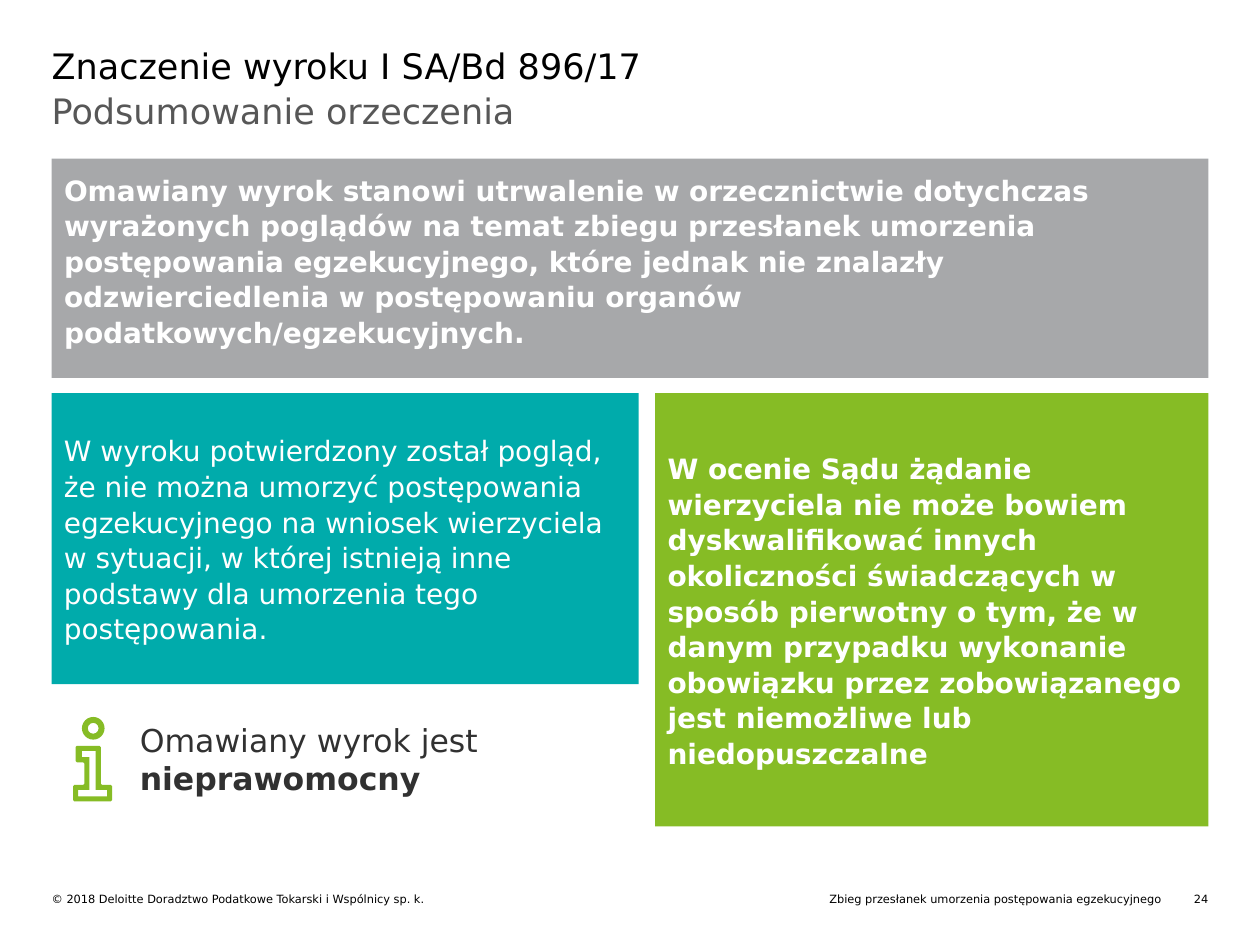
"""Build a slide that sums up a court ruling in three panels and a note."""
from math import hypot

from pptx import Presentation
from pptx.dml.color import RGBColor
from pptx.enum.shapes import MSO_SHAPE
from pptx.enum.text import MSO_ANCHOR, PP_ALIGN
from pptx.util import Inches, Pt

RECT, DONUT = MSO_SHAPE.RECTANGLE, MSO_SHAPE.DONUT
TOP, MIDDLE = MSO_ANCHOR.TOP, MSO_ANCHOR.MIDDLE
LEFT, RIGHT = PP_ALIGN.LEFT, PP_ALIGN.RIGHT

THEME = {
    "font": "DejaVu Sans",
    "colors": {"black": "000000", "subtitle": "575757", "note": "313131",
               "white": "FFFFFF", "gray": "A7A8AA", "teal": "00ABAB",
               "green": "86BC25"},
    "sizes": {"title": 20, "panel": 16, "note": 18, "footer": 6.5},
}

MARGIN, WIDTH = 0.41, 9.18
SPLIT, RIGHT_WIDTH = 5.2, 4.39
ROW = 3.12

PANELS = [
    ((MARGIN, 1.26, WIDTH, 1.74), "gray", TOP, True,
     "Omawiany wyrok stanowi utrwalenie w orzecznictwie dotychczas wyrażonych "
     "poglądów na temat zbiegu przesłanek umorzenia postępowania egzekucyjnego, "
     "które jednak nie znalazły odzwierciedlenia w postępowaniu organów "
     "podatkowych/egzekucyjnych."),
    ((MARGIN, ROW, 4.66, 2.31), "teal", MIDDLE, False,
     "W wyroku potwierdzony został pogląd, że nie można umorzyć postępowania "
     "egzekucyjnego na wniosek wierzyciela w sytuacji, w której istnieją inne "
     "podstawy dla umorzenia tego postępowania."),
    ((SPLIT, ROW, RIGHT_WIDTH, 3.44), "green", MIDDLE, True,
     "W ocenie Sądu żądanie wierzyciela nie może bowiem dyskwalifikować innych "
     "okoliczności świadczących w sposób pierwotny o tym, że w danym przypadku "
     "wykonanie obowiązku przez zobowiązanego jest niemożliwe lub "
     "niedopuszczalne"),
]

LABELS = [
    ((MARGIN, 0.35, WIDTH, 0.44), "title", "black", LEFT,
     [("Znaczenie wyroku I SA/Bd 896/17", False)]),
    ((MARGIN, 0.71, WIDTH, 0.83), "title", "subtitle", LEFT,
     [("Podsumowanie orzeczenia", False)]),
    ((1.11, 5.72, 3.87, 0.61), "note", "note", LEFT,
     [("Omawiany wyrok jest ", False), ("nieprawomocny", True)]),
    ((MARGIN, 7.08, 4.39, 0.11), "footer", "black", LEFT,
     [("© 2018 Deloitte Doradztwo Podatkowe Tokarski i Wspólnicy sp. k.", False)]),
    ((SPLIT, 7.08, 4.02, 0.11), "footer", "black", RIGHT,
     [("Zbieg przesłanek umorzenia postępowania egzekucyjnego", False)]),
    ((9.34, 7.08, 0.25, 0.11), "footer", "black", RIGHT, [("24", False)]),
]

RING = (0.65, 5.69, 0.18, 0.18)
RING_BAND = 0.26
STEM_OUTER = [(0.58, 6.36), (0.58, 6.23), (0.67, 6.23), (0.67, 6.05),
              (0.6, 6.05), (0.6, 5.92), (0.8, 5.92), (0.8, 6.23),
              (0.89, 6.23), (0.89, 6.36)]
STEM_INNER = [(0.62, 6.32), (0.62, 6.27), (0.71, 6.27), (0.71, 6.01),
              (0.65, 6.01), (0.65, 5.96), (0.76, 5.96), (0.76, 6.27),
              (0.85, 6.27), (0.85, 6.32)]


def color(name):
    return RGBColor.from_string(THEME["colors"][name])


def paint(sp, fill):
    sp.shadow.inherit = False
    sp.fill.solid()
    sp.fill.fore_color.rgb = color(fill)
    sp.line.fill.background()


def write(sp, runs, size, ink, inset=0, anchor=TOP, align=LEFT, spacing=None):
    tf = sp.text_frame
    frame = {"word_wrap": True, "vertical_anchor": anchor}
    frame.update({f"margin_{side}": Inches(inset)
                  for side in ("left", "top", "right", "bottom")})
    for key, value in frame.items():
        setattr(tf, key, value)
    p = tf.paragraphs[0]
    p.alignment, p.line_spacing = align, spacing
    for text, bold in runs:
        r = p.add_run()
        r.text = text
        font = {"name": THEME["font"], "size": Pt(THEME["sizes"][size]), "bold": bold}
        for key, value in font.items():
            setattr(r.font, key, value)
        r.font.color.rgb = color(ink)


def bevel(points, cut=0.01):
    result = []
    for i, (x, y) in enumerate(points):
        before, after = points[i - 1], points[(i + 1) % len(points)]
        for nx, ny in (before, after):
            ratio = cut / hypot(nx - x, ny - y)
            result.append((Inches(x + (nx - x) * ratio), Inches(y + (ny - y) * ratio)))
    return result


def add_info_icon(s):
    ring = s.shapes.add_shape(DONUT, *map(Inches, RING))
    ring.adjustments[0] = RING_BAND
    outer = bevel(STEM_OUTER)
    inner = [(Inches(x), Inches(y)) for x, y in STEM_INNER]
    builder = s.shapes.build_freeform(*outer[0])
    builder.add_line_segments(outer[1:])
    builder.move_to(*inner[0])
    builder.add_line_segments(inner[1:])
    for sp in (ring, builder.convert_to_shape()):
        paint(sp, "green")


def main():
    prs = Presentation()
    prs.slide_width, prs.slide_height = Inches(10), Inches(7.5)
    s = prs.slides.add_slide(prs.slide_layouts[6])
    for box, fill, anchor, bold, text in PANELS:
        sp = s.shapes.add_shape(RECT, *map(Inches, box))
        paint(sp, fill)
        write(sp, [(text, bold)], "panel", "white", 0.1, anchor, spacing=1.06)
    for box, size, ink, align, runs in LABELS:
        sp = s.shapes.add_textbox(*map(Inches, box))
        write(sp, runs, size, ink, align=align)
    add_info_icon(s)
    prs.save("out.pptx")


if __name__ == "__main__":
    main()
